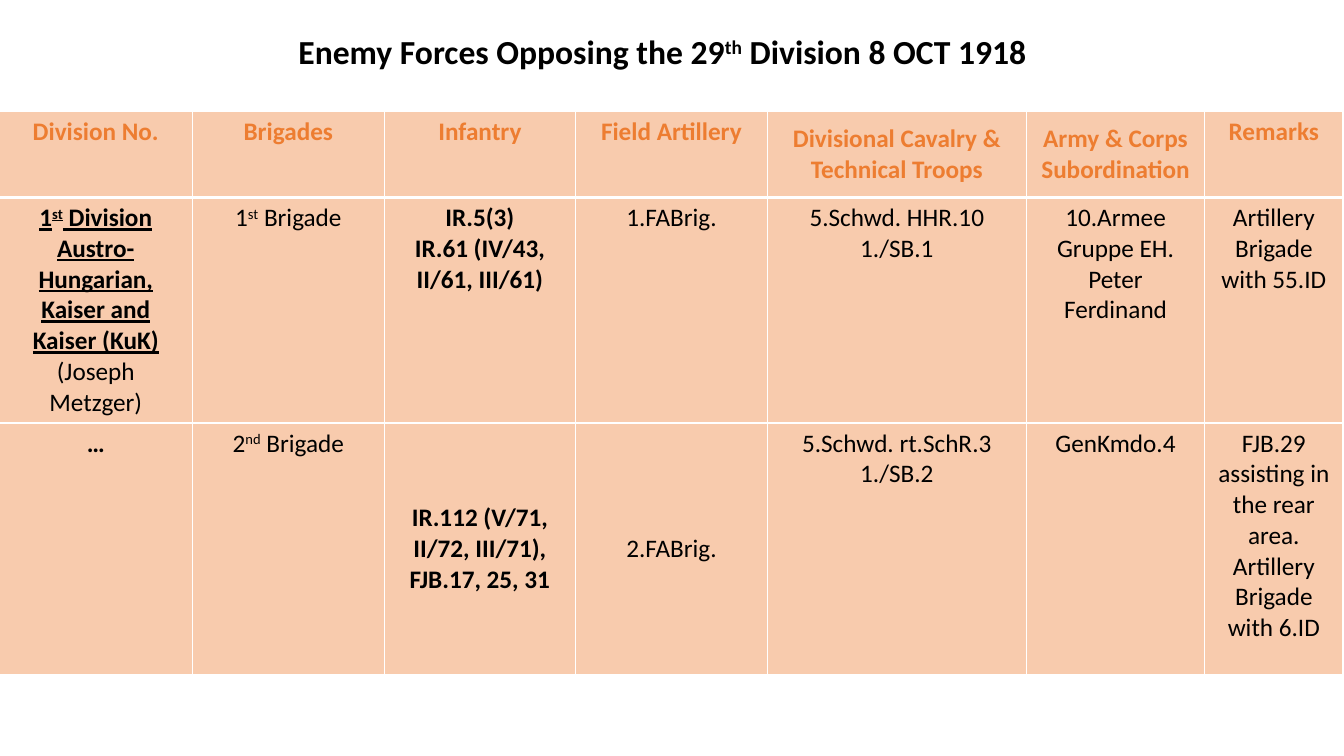
"""Build the slide on enemy forces opposing the 29th Division."""
from lxml.etree import SubElement
from pptx import Presentation
from pptx.dml.color import RGBColor
from pptx.enum.text import MSO_ANCHOR, MSO_AUTO_SIZE, PP_ALIGN
from pptx.oxml.ns import qn
from pptx.util import Inches, Pt

TITLE = "Enemy Forces Opposing the 29^th^ Division 8 OCT 1918"
HEADINGS = ["Division No.", "Brigades", "Infantry", "Field Artillery",
            "Divisional Cavalry & Technical Troops",
            "Army & Corps Subordination", "Remarks"]
BOLD = {"bold": True}
UNITS = [
    [[("1^st^ Division Austro-Hungarian, Kaiser and Kaiser (KuK)",
       {"bold": True, "underline": True}),
      ("(Joseph Metzger)", {})],
     [("1^st^ Brigade", {})],
     [("IR.5(3)", BOLD), ("IR.61 (IV/43, II/61, III/61)", BOLD)],
     [("1.FABrig.", {})],
     [("5.Schwd. HHR.10 1./SB.1", {})],
     [("10.Armee Gruppe EH. Peter Ferdinand", {})],
     [("Artillery Brigade with 55.ID", {})]],
    [[("…", BOLD)],
     [("2^nd^ Brigade", {})],
     [("IR.112 (V/71, II/72, III/71), FJB.17, 25, 31", BOLD)],
     [("2.FABrig.", {})],
     [("5.Schwd. rt.SchR.3 1./SB.2", {})],
     [("GenKmdo.4", {})],
     [("FJB.29 assisting in the rear area. Artillery Brigade with 6.ID", {})]],
]
MIDDLE_CELLS = {(0, 4), (0, 5), (2, 2), (2, 3)}
COLUMN_WIDTHS = [1.92, 1.9, 1.9, 1.9, 2.57, 1.77, 1.37]
ROW_HEIGHTS = [0.85, 2.2, 2.5]
BLACK, WHITE, ORANGE, PEACH = "000000", "FFFFFF", "ED7D31", "F8CBAD"


def color(value):
    return RGBColor.from_string(value)


def write(frame, text, size=18, ink=BLACK, bold=False, underline=False):
    """Add a centred paragraph, raising the parts between carets."""
    first = frame.paragraphs[0]
    paragraph = frame.add_paragraph() if first.runs else first
    paragraph.alignment = PP_ALIGN.CENTER
    paragraph.line_spacing = 1.0
    for position, part in enumerate(text.split("^")):
        run = paragraph.add_run()
        run.text = part
        run.font.name = "Calibri"
        run.font.size = Pt(size)
        run.font.bold = bold
        run.font.underline = underline
        run.font.color.rgb = color(ink)
        if position % 2:
            run.font._element.set("baseline", "30000")


def draw_borders(cell, widths):
    properties = cell._tc.get_or_add_tcPr()
    for side, width in zip(("lnL", "lnR", "lnT", "lnB"), widths):
        line = SubElement(properties, qn(f"a:{side}"), w=str(Pt(width)))
        fill = SubElement(line, qn("a:solidFill"))
        SubElement(fill, qn("a:srgbClr"), val=WHITE)


def add_title(slide):
    title = slide.shapes.title
    title.left, title.top = Inches(-0.19), Inches(0.26)
    title.width, title.height = Inches(13.52), Inches(1.11)
    frame = title.text_frame
    frame.auto_size = MSO_AUTO_SIZE.NONE
    frame.word_wrap = True
    frame.vertical_anchor = MSO_ANCHOR.TOP
    write(frame, TITLE, size=24, bold=True)


def add_forces(slide):
    heading_style = {"bold": True, "ink": ORANGE}
    rows = [[[(heading, heading_style)] for heading in HEADINGS]] + UNITS
    forces = slide.shapes.add_table(
        len(rows), len(HEADINGS), Inches(-0.01), Inches(1.11),
        Inches(sum(COLUMN_WIDTHS)), Inches(sum(ROW_HEIGHTS))).table
    for column, width in zip(forces.columns, COLUMN_WIDTHS):
        column.width = Inches(width)
    for row, height in zip(forces.rows, ROW_HEIGHTS):
        row.height = Inches(height)
    for r, entries in enumerate(rows):
        for c, paragraphs in enumerate(entries):
            cell = forces.cell(r, c)
            draw_borders(cell, (1, 1, 3 if r == 1 else 1, 3 if r == 0 else 1))
            cell.fill.solid()
            cell.fill.fore_color.rgb = color(PEACH)
            middle = (r, c) in MIDDLE_CELLS
            cell.vertical_anchor = MSO_ANCHOR.MIDDLE if middle else MSO_ANCHOR.TOP
            for text, style in paragraphs:
                write(cell.text_frame, text, **style)


def main():
    deck = Presentation()
    deck.slide_width, deck.slide_height = Inches(13.33), Inches(7.5)
    slide = deck.slides.add_slide(deck.slide_layouts.get_by_name("Title Only"))
    add_title(slide)
    add_forces(slide)
    deck.save("out.pptx")


if __name__ == "__main__":
    main()
